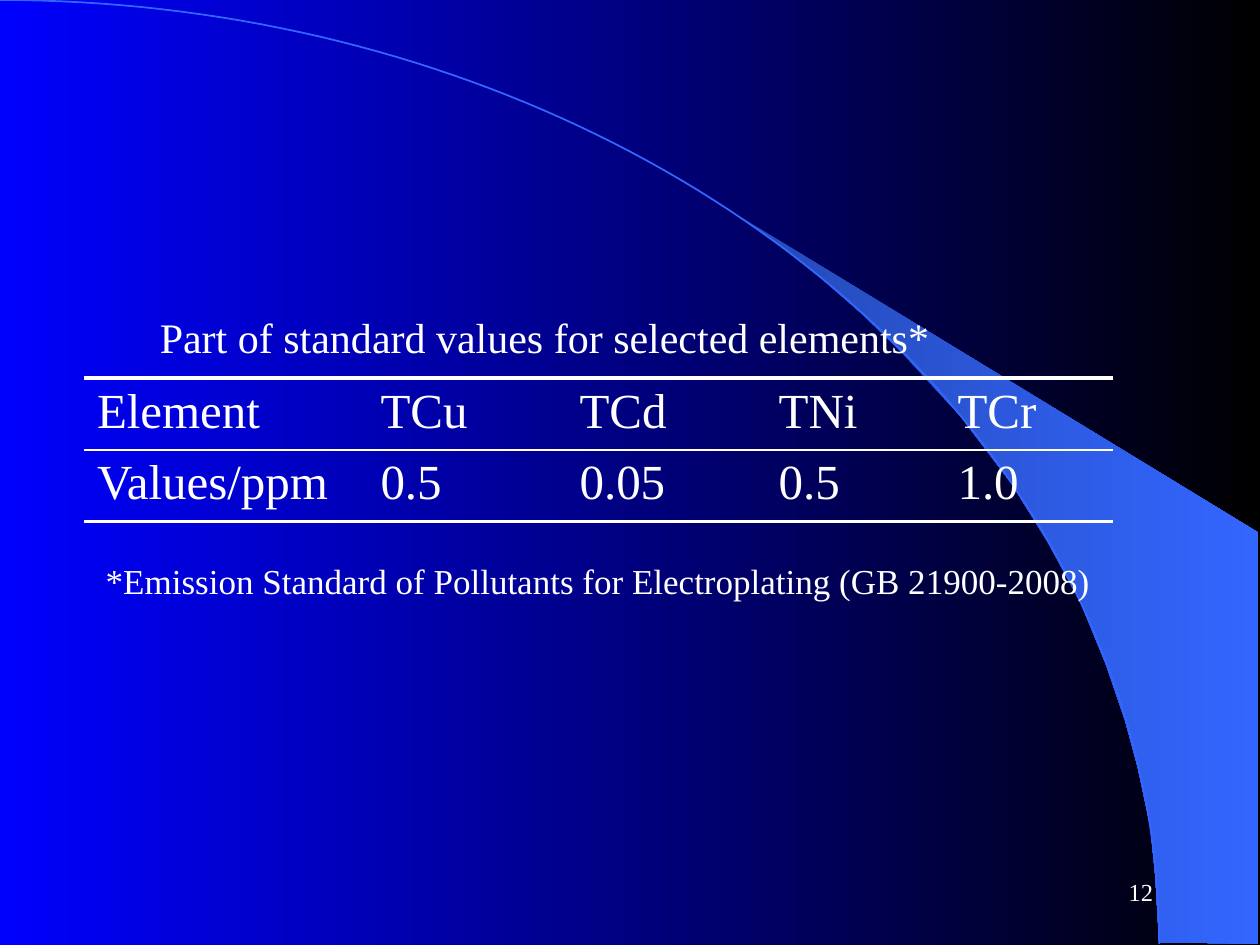
from math import cos, pi, sin

from lxml import etree
from pptx import Presentation
from pptx.dml.color import RGBColor
from pptx.enum.text import MSO_ANCHOR as Anchor, PP_ALIGN as Align
from pptx.oxml.ns import qn
from pptx.util import Inches, Pt

FONT = "Times New Roman"
WHITE = RGBColor(0xFF, 0xFF, 0xFF)
BLACK = RGBColor(0, 0, 0)
BLUE = RGBColor(0, 0, 0xFF)
BEAM_DARK = RGBColor(0x24, 0x49, 0xB6)
BEAM_LIGHT = RGBColor(0x33, 0x66, 0xFF)
NO_STYLE_NO_GRID = "{2D5ABB26-0587-4C30-8999-92F81FD0307C}"

BEAM_OUTLINE = [
    (9.2, 7.48), (9.99, 7.49), (9.99, 4.23), (5.89, 1.73), (6.24, 1.99),
    (6.53, 2.22), (6.85, 2.5), (7.16, 2.8), (7.62, 3.3), (8.03, 3.84),
    (8.32, 4.31), (8.58, 4.79), (8.78, 5.28), (8.93, 5.72), (9.03, 6.09),
    (9.13, 6.56), (9.17, 6.96),
]
STANDARD_VALUES = [
    ["Element", "TCu", "TCd", "TNi", "TCr"],
    ["Values/ppm", "0.5", "0.05", "0.5", "1.0"],
]
COLUMN_WIDTHS = [2.25, 1.58, 1.58, 1.42, 1.33]
ROW_HEIGHT = 0.57
THICK, THIN = Pt(2.25), Pt(1)


def set_gradient(fill, left_color, right_color):
    fill.gradient()
    fill.gradient_angle = 0
    for stop, color in zip(fill.gradient_stops, (left_color, right_color)):
        stop.color.rgb = color


def add_outline(slide, points, close):
    corners = [(Inches(x), Inches(y)) for x, y in points]
    builder = slide.shapes.build_freeform(*corners[0])
    builder.add_line_segments(corners[1:], close=close)
    outline = builder.convert_to_shape()
    outline.shadow.inherit = False
    return outline


def add_backdrop(slide, radius_x, radius_y, steps=90):
    """Gradient background, light beam and the quarter ellipse along it."""
    set_gradient(slide.background.fill, BLUE, BLACK)
    beam = add_outline(slide, BEAM_OUTLINE, close=True)
    set_gradient(beam.fill, BEAM_DARK, BEAM_LIGHT)
    beam.line.fill.background()

    angles = [pi / 2 * step / steps for step in range(steps + 1)]
    arc = add_outline(
        slide, [(radius_x * sin(a), radius_y * (1 - cos(a))) for a in angles], close=False)
    arc.fill.background()
    arc.line.color.rgb = BEAM_LIGHT
    arc.line.width = Pt(1)


def style_text(paragraph, size):
    paragraph.font.name = FONT
    paragraph.font.size = Pt(size)
    paragraph.font.color.rgb = WHITE


def add_text(slide, box, text, size, align=Align.LEFT, anchor=Anchor.TOP):
    frame = slide.shapes.add_textbox(*map(Inches, box)).text_frame
    frame.word_wrap = True
    frame.vertical_anchor = anchor
    paragraph = frame.paragraphs[0]
    paragraph.text = text
    paragraph.alignment = align
    style_text(paragraph, size)


def set_rules(cell, top, bottom):
    """Draw the cell's top and bottom borders, which must precede its fill."""
    properties = cell._tc.get_or_add_tcPr()
    for position, (tag, width) in enumerate((("a:lnT", top), ("a:lnB", bottom))):
        rule = etree.Element(qn(tag), w=str(width))
        solid = etree.SubElement(rule, qn("a:solidFill"))
        etree.SubElement(solid, qn("a:srgbClr"), val=str(WHITE))
        properties.insert(position, rule)


def add_standards_table(slide, left, top):
    box = (left, top, sum(COLUMN_WIDTHS), ROW_HEIGHT * len(STANDARD_VALUES))
    table = slide.shapes.add_table(
        len(STANDARD_VALUES), len(COLUMN_WIDTHS), *map(Inches, box)).table
    table.first_row = table.horz_banding = False
    table._tbl.tblPr.find(qn("a:tableStyleId")).text = NO_STYLE_NO_GRID
    for column, width in zip(table.columns, COLUMN_WIDTHS):
        column.width = Inches(width)
    row_rules = [(THICK, THIN), (THIN, THICK)]
    for row, values, rules in zip(table.rows, STANDARD_VALUES, row_rules):
        row.height = Inches(ROW_HEIGHT)
        for cell, value in zip(row.cells, values):
            cell.text = value
            style_text(cell.text_frame.paragraphs[0], 28)
            cell.fill.background()
            set_rules(cell, *rules)


def main():
    deck = Presentation()
    deck.slide_width, deck.slide_height = Inches(10), Inches(7.5)
    slide = deck.slides.add_slide(deck.slide_layouts[6])
    add_backdrop(slide, 9.2, 7.49)
    add_text(slide, (7.17, 6.83, 2.08, 0.5), "12", 14, Align.RIGHT, Anchor.MIDDLE)
    add_text(slide, (1.17, 2.42, 7, 0.51),
             "Part of standard values for selected elements*", 24)
    add_standards_table(slide, 0.67, 3)
    add_text(slide, (0.74, 4.39, 8.08, 0.89),
             "*Emission Standard of Pollutants for Electroplating (GB 21900-2008)", 20)
    deck.save("out.pptx")


if __name__ == "__main__":
    main()
